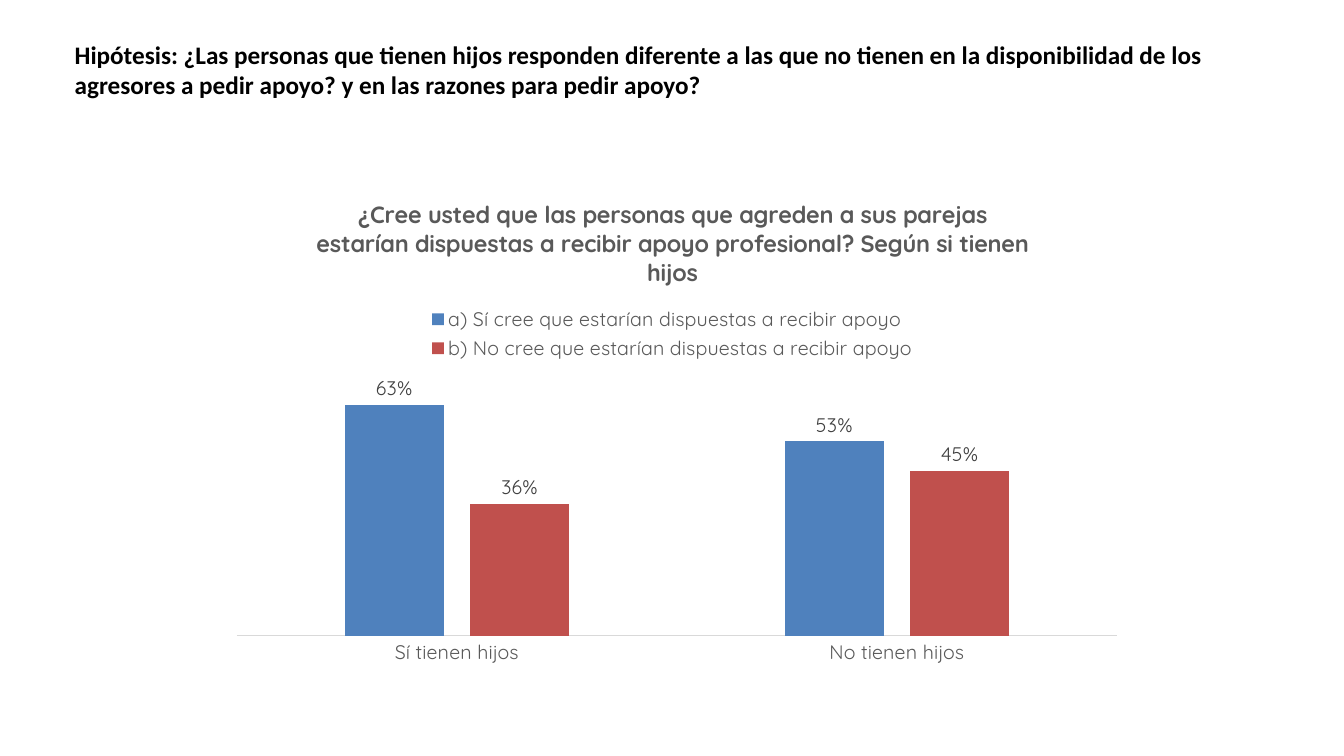
from dataclasses import dataclass

from lxml import etree
from pptx import Presentation
from pptx import util as u
from pptx.chart.data import CategoryChartData
from pptx.dml.color import RGBColor
from pptx.enum import chart as ch
from pptx.enum import text
from pptx.oxml.ns import qn


@dataclass(frozen=True)
class Theme:
    title_font: str = "Calibri"
    chart_font: str = "Quicksand"
    title_size: float = 18
    chart_title_size: float = 16.8
    chart_size: float = 14
    ink: str = "000000"
    muted: str = "595959"
    label: str = "404040"
    axis: str = "D9D9D9"
    series: tuple = ("4F81BD", "C0504D")


class Deck:
    def __init__(self, theme):
        self.theme = theme
        self.prs = Presentation()
        self.prs.slide_width = u.Inches(13.33)
        self.prs.slide_height = u.Inches(7.5)
        self.s = None

    def add_slide(self):
        self.s = self.prs.slides.add_slide(self.prs.slide_layouts[5])

    def style(self, font, name, size, color, bold=False):
        font.name, font.size, font.bold = name, u.Pt(size), bold
        font.color.rgb = RGBColor.from_string(color)

    def chart_style(self, font, color):
        self.style(font, self.theme.chart_font, self.theme.chart_size, color)

    def title(self, words, box):
        sp = self.s.shapes.title
        sp.left, sp.top, sp.width, sp.height = map(u.Inches, box)
        tf = sp.text_frame
        tf.text = words
        tf.word_wrap = True
        tf.auto_size = text.MSO_AUTO_SIZE.SHAPE_TO_FIT_TEXT
        tf.vertical_anchor = text.MSO_ANCHOR.TOP
        p = tf.paragraphs[0]
        p.alignment = text.PP_ALIGN.LEFT
        self.style(p.font, self.theme.title_font, self.theme.title_size,
                   self.theme.ink, bold=True)

    def column_chart(self, heading, categories, series, box, plot_area):
        theme = self.theme
        data = CategoryChartData(number_format="0%")
        data.categories = categories
        for name, values in series:
            data.add_series(name, values)
        chart = self.s.shapes.add_chart(
            ch.XL_CHART_TYPE.COLUMN_CLUSTERED, *map(u.Inches, box), data).chart
        self.chart_style(chart.font, theme.ink)

        # Heading and legend
        chart.has_title = True
        chart.chart_title.include_in_layout = False
        tf = chart.chart_title.text_frame
        tf.text = heading
        self.style(tf.paragraphs[0].font, theme.chart_font,
                   theme.chart_title_size, theme.muted, bold=True)
        chart.has_legend = True
        chart.legend.position = ch.XL_LEGEND_POSITION.TOP
        chart.legend.include_in_layout = False
        self.chart_style(chart.legend.font, theme.muted)

        # Axes
        axis = chart.category_axis
        axis.major_tick_mark = ch.XL_TICK_MARK.NONE
        axis.format.line.color.rgb = RGBColor.from_string(theme.axis)
        axis.format.line.width = u.Pt(0.75)
        self.chart_style(axis.tick_labels.font, theme.muted)
        values_axis = chart.value_axis
        values_axis.minimum_scale, values_axis.maximum_scale = 0, 0.7
        values_axis.has_major_gridlines = False
        values_axis.tick_labels.number_format = "0%"
        values_axis.tick_labels.number_format_is_linked = False
        values_axis.visible = False

        # Columns and their labels
        plot = chart.plots[0]
        plot.gap_width, plot.overlap, plot.vary_by_categories = 219, -27, False
        for column, color in zip(plot.series, theme.series):
            column.format.fill.solid()
            column.format.fill.fore_color.rgb = RGBColor.from_string(color)
            labels = column.data_labels
            labels.show_value = True
            labels.number_format = "0%"
            labels.number_format_is_linked = False
            labels.position = ch.XL_LABEL_POSITION.OUTSIDE_END
            self.chart_style(labels.font, theme.label)
        self.place_plot(chart, plot_area)

    def place_plot(self, chart, plot_area):
        area = chart._chartSpace.chart.plotArea
        for old in area.findall(qn("c:layout")):
            area.remove(old)
        layout = etree.Element(qn("c:layout"))
        manual = etree.SubElement(layout, qn("c:manualLayout"))
        settings = [("layoutTarget", "inner"), ("xMode", "edge"), ("yMode", "edge")]
        settings += zip("xywh", plot_area)
        for tag, value in settings:
            etree.SubElement(manual, qn(f"c:{tag}")).set("val", str(value))
        area.insert(0, layout)


def main():
    deck = Deck(Theme())
    deck.add_slide()

    # Hypothesis
    deck.title(
        "Hipótesis: ¿Las personas que tienen hijos responden diferente a las que "
        "no tienen en la disponibilidad de los agresores a pedir apoyo? y en las "
        "razones para pedir apoyo?",
        (0.64, 0.34, 11.67, 0.71))

    # Answers by parenthood
    deck.column_chart(
        "¿Cree usted que las personas que agreden a sus parejas estarían "
        "dispuestas a recibir apoyo profesional? Según si tienen hijos",
        ["Sí tienen hijos", "No tienen hijos"],
        [("a) Sí cree que estarían dispuestas a recibir apoyo", (0.63, 0.53)),
         ("b) No cree que estarían dispuestas a recibir apoyo", (0.36, 0.45))],
        box=(2.17, 1.76, 9, 5),
        plot_area=(0.02, 0.4, 0.97, 0.51))

    deck.prs.save("out.pptx")


if __name__ == "__main__":
    main()
